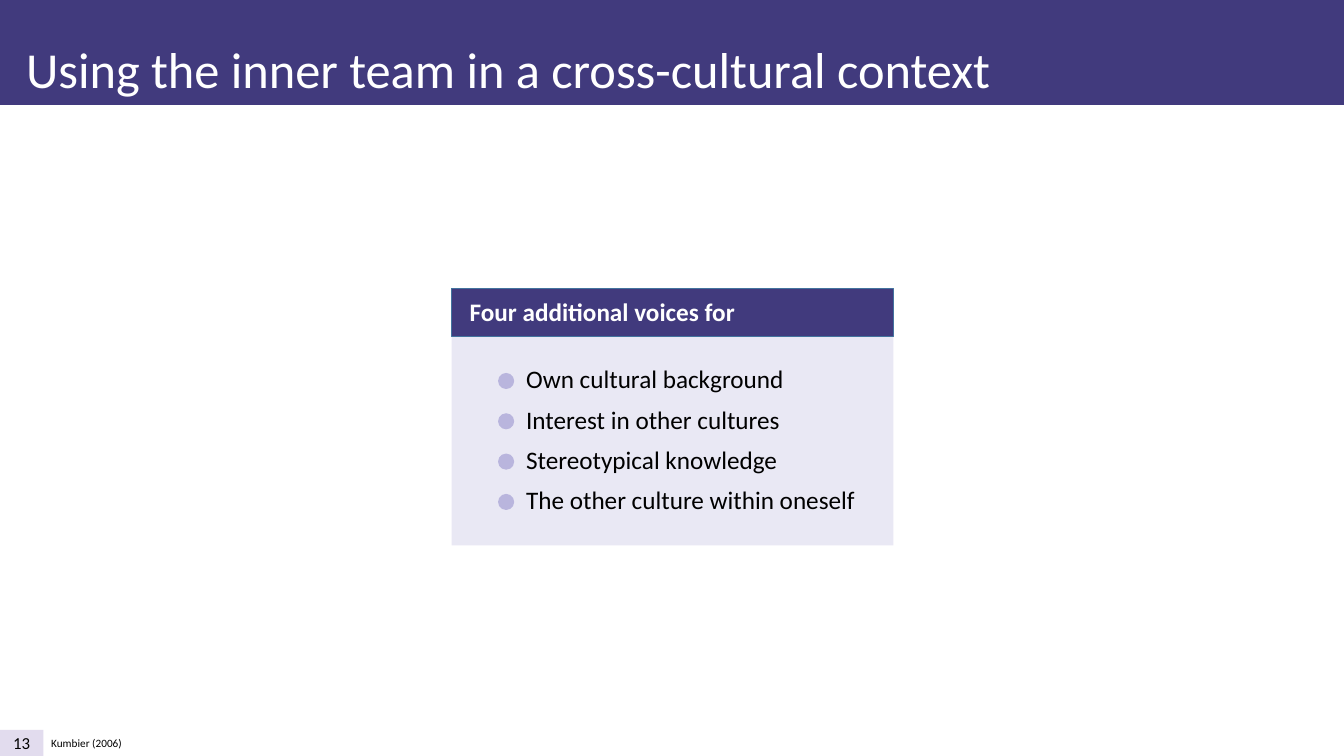
from dataclasses import dataclass
from typing import Optional

from pptx import Presentation
from pptx.dml.color import RGBColor
from pptx.enum.shapes import MSO_SHAPE
from pptx.enum.text import MSO_ANCHOR, MSO_AUTO_SIZE, PP_ALIGN
from pptx.util import Inches, Pt

WHITE = RGBColor(0xFF, 0xFF, 0xFF)
BLACK = RGBColor(0x00, 0x00, 0x00)
PURPLE = RGBColor(0x41, 0x3A, 0x7D)
PALE = RGBColor(0xE9, 0xE8, 0xF4)
LILAC = RGBColor(0xE2, 0xDC, 0xEE)
DOT = RGBColor(0xB9, 0xB5, 0xDD)
BLUE = RGBColor(0x43, 0x73, 0x9E)

FONT = "Calibri"
VOICES = (
    "Own cultural background",
    "Interest in other cultures",
    "Stereotypical knowledge",
    "The other culture within oneself",
)
TOP, STEP = 3.56, 0.4


@dataclass
class Block:
    left: float
    top: float
    width: float
    height: float
    fill: RGBColor
    line: Optional[RGBColor] = None
    kind: MSO_SHAPE = MSO_SHAPE.RECTANGLE


@dataclass
class Label:
    text: str
    left: float
    top: float
    width: float
    height: float
    size: int = 18
    color: RGBColor = BLACK
    bold: bool = False


def set_text(shape, text: str, size: int, color: RGBColor, bold: bool = False):
    """Write one line of text and return its paragraph."""
    para = shape.text_frame.paragraphs[0]
    para.text = text
    font = para.font
    font.name, font.size, font.bold = FONT, Pt(size), bold
    font.color.rgb = color
    return para


def draw_block(shapes, block: Block):
    shape = shapes.add_shape(
        block.kind, Inches(block.left), Inches(block.top),
        Inches(block.width), Inches(block.height))
    shape.shadow.inherit = False
    shape.fill.solid()
    shape.fill.fore_color.rgb = block.fill
    if block.line is None:
        shape.line.fill.background()
    else:
        shape.line.color.rgb = block.line
        shape.line.width = Pt(1)
    return shape


def draw_label(shapes, label: Label) -> None:
    box = shapes.add_textbox(
        Inches(label.left), Inches(label.top),
        Inches(label.width), Inches(label.height))
    box.text_frame.word_wrap = False
    box.text_frame.auto_size = MSO_AUTO_SIZE.SHAPE_TO_FIT_TEXT
    set_text(box, label.text, label.size, label.color, label.bold)


def main() -> None:
    deck = Presentation()
    deck.slide_width, deck.slide_height = Inches(13.33), Inches(7.5)
    shapes = deck.slides.add_slide(deck.slide_layouts[6]).shapes

    # Page number
    page = draw_block(shapes, Block(0, 7.24, 0.43, 0.26, LILAC))
    frame = page.text_frame
    frame.vertical_anchor = MSO_ANCHOR.MIDDLE
    set_text(page, "13", 12, BLACK).alignment = PP_ALIGN.CENTER

    # Title bar
    draw_block(shapes, Block(0, -0.01, 13.34, 1.05, PURPLE))
    draw_label(shapes, Label("Using the inner team in a cross-cultural context",
                             0.16, 0.33, 9.97, 0.71, 36, WHITE))

    # Panel with its heading
    panel = shapes.add_group_shape().shapes
    draw_block(panel, Block(4.48, 2.86, 4.38, 2.55, PALE))
    draw_block(panel, Block(4.48, 2.86, 4.38, 0.48, PURPLE, BLUE))
    draw_label(panel, Label("Four additional voices for",
                            4.56, 2.89, 2.85, 0.4, 18, WHITE, True))

    # Voices, each with a dot
    for row, voice in enumerate(VOICES):
        top = TOP + row * STEP
        width = 3.5 if row == 3 else 2.78
        draw_label(panel, Label(voice, 5.12, top, width, STEP))
        draw_block(panel, Block(4.94, top + 0.14, 0.16, 0.16, DOT,
                                kind=MSO_SHAPE.OVAL))

    # Citation
    draw_label(shapes, Label("Kumbier (2006)", 0.41, 7.26, 0.93, 0.24, 8))

    deck.save("out.pptx")


if __name__ == "__main__":
    main()
